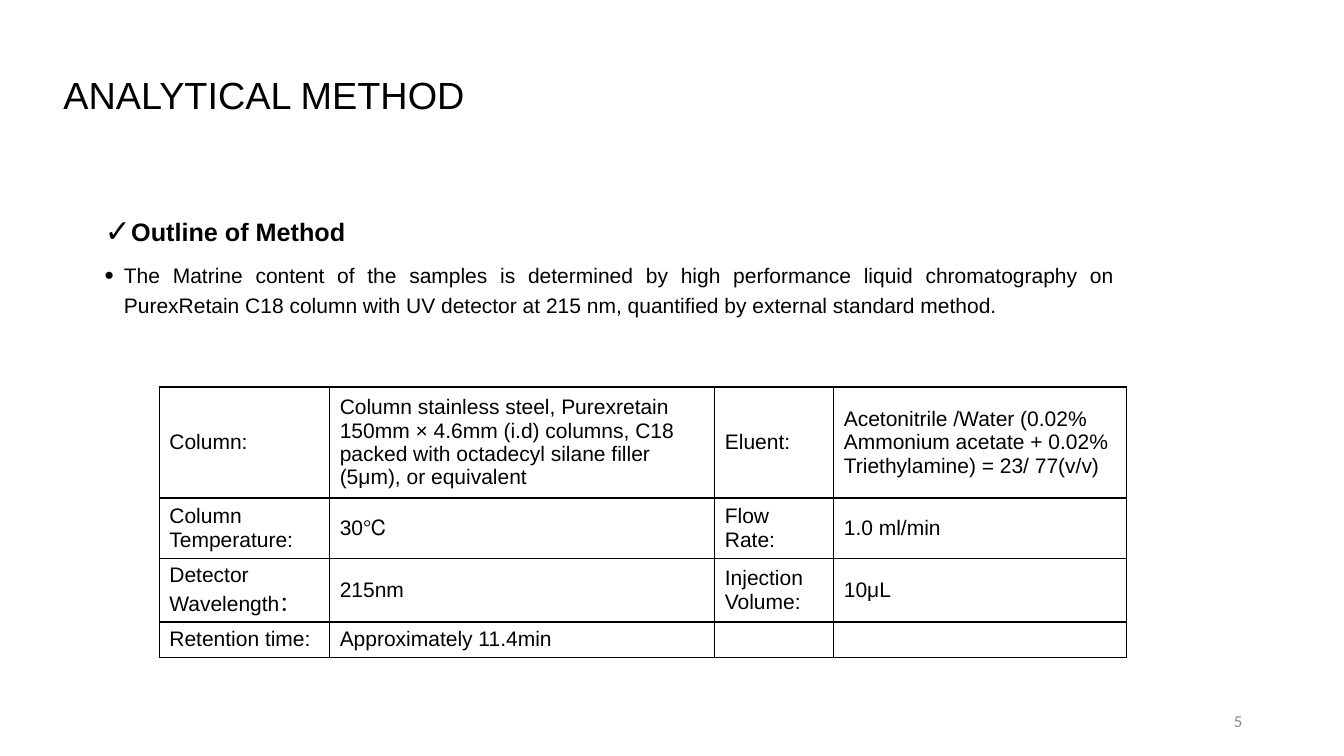
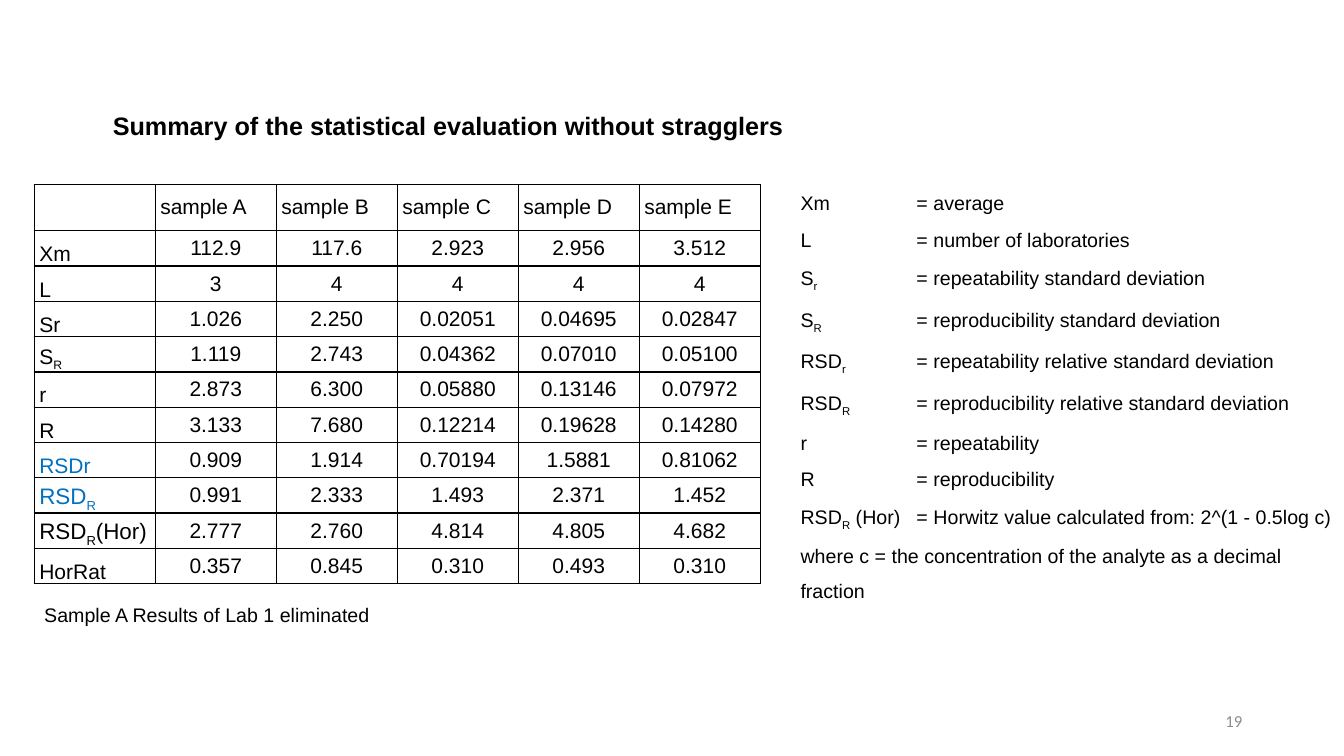
from lxml import etree
from pptx import Presentation
from pptx import util as u
from pptx.dml.color import RGBColor
from pptx.enum import text
from pptx.oxml import ns

COLORS = {"ink": "000000", "accent": "0070C0", "number": "8C8C8C"}
FONT = "Arial"
MIDDLE, BOTTOM = text.MSO_ANCHOR.MIDDLE, text.MSO_ANCHOR.BOTTOM
CENTER, RIGHT, JUSTIFY = text.PP_ALIGN.CENTER, text.PP_ALIGN.RIGHT, text.PP_ALIGN.JUSTIFY

METHOD_ROWS = [
    ["Column:",
     "Column stainless steel, Purexretain 150mm × 4.6mm (i.d) columns, C18 packed with "
     "octadecyl silane filler (5μm), or equivalent",
     "Eluent:",
     "Acetonitrile /Water (0.02% Ammonium acetate + 0.02% Triethylamine) = 23/ 77(v/v)"],
    ["Column Temperature:", "30℃", "Flow Rate:", "1.0 ml/min"],
    ["Detector Wavelength：", "215nm", "Injection Volume:", "10μL"],
    ["Retention time:", "Approximately 11.4min", "", ""],
]

# Text between tildes is set as a subscript
STATISTICS_ROWS = [
    ["", "sample A", "sample B", "sample C", "sample D", "sample E"],
    ["Xm", "112.9", "117.6", "2.923", "2.956", "3.512"],
    ["L", "3", "4", "4", "4", "4"],
    ["Sr", "1.026", "2.250", "0.02051", "0.04695", "0.02847"],
    ["S~R~", "1.119", "2.743", "0.04362", "0.07010", "0.05100"],
    ["r", "2.873", "6.300", "0.05880", "0.13146", "0.07972"],
    ["R", "3.133", "7.680", "0.12214", "0.19628", "0.14280"],
    ["RSDr", "0.909", "1.914", "0.70194", "1.5881", "0.81062"],
    ["RSD~R~", "0.991", "2.333", "1.493", "2.371", "1.452"],
    ["RSD~R~(Hor)", "2.777", "2.760", "4.814", "4.805", "4.682"],
    ["HorRat", "0.357", "0.845", "0.310", "0.493", "0.310"],
]

LEGEND = [
    ("Xm", "average"),
    ("L", "number of laboratories"),
    ("S~r~", "repeatability standard deviation"),
    ("S~R~", "reproducibility standard deviation"),
    ("RSD~r~", "repeatability relative standard deviation"),
    ("RSD~R~", "reproducibility relative standard deviation"),
    ("r", "repeatability"),
    ("R", "reproducibility"),
    ("RSD~R~ (Hor)", "Horwitz value calculated from: 2^(1 - 0.5log c) where c = "
                     "the concentration of the analyte as a decimal fraction"),
]


def apply(target, values):
    for name, value in values.items():
        setattr(target, name, value)


def add_xml(parent, tag, **attributes):
    return etree.SubElement(parent, ns.qn(tag), **attributes)


# Text
def write(paragraph, content, size, color="ink", font=FONT, bold=False, **layout):
    apply(paragraph, layout)
    if not content:
        add_xml(paragraph._p, "a:endParaRPr", sz=str(size * 100))
    for index, part in enumerate(content.split("~")):
        if not part:
            continue
        run = paragraph.add_run()
        run.text = part
        apply(run.font, {"size": u.Pt(size), "name": font, "bold": bold})
        run.font.color.rgb = RGBColor.from_string(COLORS[color])
        if index % 2:
            run.font._element.set("baseline", "-25000")


def add_frame(slide, left, top, width, height, **values):
    box = slide.shapes.add_textbox(*map(u.Inches, (left, top, width, height)))
    apply(box.text_frame, {"word_wrap": True, **values})
    return box.text_frame


def add_line(slide, place, content, size, anchor=text.MSO_ANCHOR.TOP, **style):
    frame = add_frame(slide, *place, vertical_anchor=anchor)
    write(frame.paragraphs[0], content, size, **style)


def next_paragraph(frame, index):
    return frame.add_paragraph() if index else frame.paragraphs[0]


def add_bullets(slide, place, items):
    frame = add_frame(slide, *place)
    for index, (mark, content, size, bold) in enumerate(items):
        paragraph = next_paragraph(frame, index)
        write(paragraph, content, size, bold=bold, alignment=JUSTIFY,
              line_spacing=1.2, space_before=u.Pt(7.5))
        props = paragraph._p.get_or_add_pPr()
        apply_indent = {"marL": u.Inches(0.19), "indent": u.Inches(-0.19)}
        for name, value in apply_indent.items():
            props.set(name, str(value))
        add_xml(props, "a:buSzPct", val="125000")
        add_xml(props, "a:buFont", typeface=FONT)
        add_xml(props, "a:buChar", char=mark)


def add_legend(slide, place, entries):
    frame = add_frame(slide, *place, margin_left=u.Inches(1.48))
    for index, (symbol, meaning) in enumerate(entries):
        paragraph = next_paragraph(frame, index)
        write(paragraph, f"{symbol}\t= {meaning}", 14,
              line_spacing=1.5, space_before=u.Pt(1))
        tabs = add_xml(paragraph._p.get_or_add_pPr(), "a:tabLst")
        add_xml(tabs, "a:tab", pos=str(u.Inches(1.15)), algn="l")


# Tables
def outline(cell):
    cell.fill.background()
    props = cell._tc.get_or_add_tcPr()
    for index, side in enumerate(("a:lnL", "a:lnR", "a:lnT", "a:lnB")):
        border = etree.Element(ns.qn(side), w=str(u.Pt(1)))
        add_xml(add_xml(border, "a:solidFill"), "a:srgbClr", val=COLORS["ink"])
        props.insert(index, border)


def add_grid(slide, left, top, widths, heights, rows, style_of):
    """style_of(row, column, content) gives the cell format and the text format."""
    frame = slide.shapes.add_table(
        len(rows), len(widths),
        *map(u.Inches, (left, top, sum(widths), sum(heights))))
    grid = frame.table
    apply(grid, {"first_row": False, "horz_banding": False})
    for column, width in zip(grid.columns, widths):
        column.width = u.Inches(width)
    for row, height in zip(grid.rows, heights):
        row.height = u.Inches(height)
    for r, contents in enumerate(rows):
        for c, content in enumerate(contents):
            cell = grid.cell(r, c)
            cell_format, text_format = style_of(r, c, content)
            apply(cell, cell_format)
            write(cell.text_frame.paragraphs[0], content, **text_format)
            outline(cell)


def method_style(row, column, content):
    return {"vertical_anchor": MIDDLE}, {"size": 15}


def statistics_style(row, column, content):
    is_value = row > 0 and column > 0
    is_label = row > 0 and column == 0
    side = u.Inches(0.07 if is_value else 0.05)
    cell_format = {"vertical_anchor": BOTTOM if is_label else MIDDLE,
                   "margin_left": side, "margin_right": side,
                   "margin_top": 0, "margin_bottom": 0}
    text_format = {"size": 16 if content.startswith("RSD~") else 15,
                   "color": "accent" if content in ("RSDr", "RSD~R~") else "ink"}
    if is_value:
        text_format["alignment"] = CENTER
    return cell_format, text_format


# Slides
def add_slide(deck, number):
    slide = deck.slides.add_slide(deck.slide_layouts[6])
    add_line(slide, (9.42, 6.95, 3, 0.4), str(number), 12, anchor=MIDDLE,
             color="number", font="Calibri", alignment=RIGHT)
    return slide


def build_method(deck):
    slide = add_slide(deck, 5)
    add_line(slide, (0.53, 0.36, 8.12, 1.21), "ANALYTICAL METHOD", 27,
             anchor=MIDDLE, line_spacing=0.9)
    add_bullets(slide, (0.94, 2.04, 10.21, 1.65), [
        ("✓", "Outline of Method", 18, True),
        ("•", "The Matrine content of the samples is determined by high performance "
              "liquid chromatography on PurexRetain C18 column with UV detector at "
              "215 nm, quantified by external standard method.", 15, False),
    ])
    add_grid(slide, 1.58, 3.84, [1.69, 3.82, 1.18, 2.9], [1.03, 0.56, 0.63, 0.34],
             METHOD_ROWS, method_style)


def build_statistics(deck):
    slide = add_slide(deck, 19)
    add_line(slide, (1.02, 1.05, 8.39, 0.4),
             "Summary of the statistical evaluation without stragglers", 18, bold=True)
    add_grid(slide, 0.34, 1.83, [1.2] * 6, [0.46] + [0.35] * 10,
             STATISTICS_ROWS, statistics_style)
    add_line(slide, (0.34, 5.93, 6.67, 0.34), "Sample A Results of Lab 1 eliminated", 14)
    add_legend(slide, (6.46, 1.73, 6.88, 4.1), LEGEND)


def main():
    deck = Presentation()
    apply(deck, {"slide_width": u.Inches(13.33), "slide_height": u.Inches(7.5)})
    build_method(deck)
    build_statistics(deck)
    deck.save("out.pptx")


if __name__ == "__main__":
    main()
